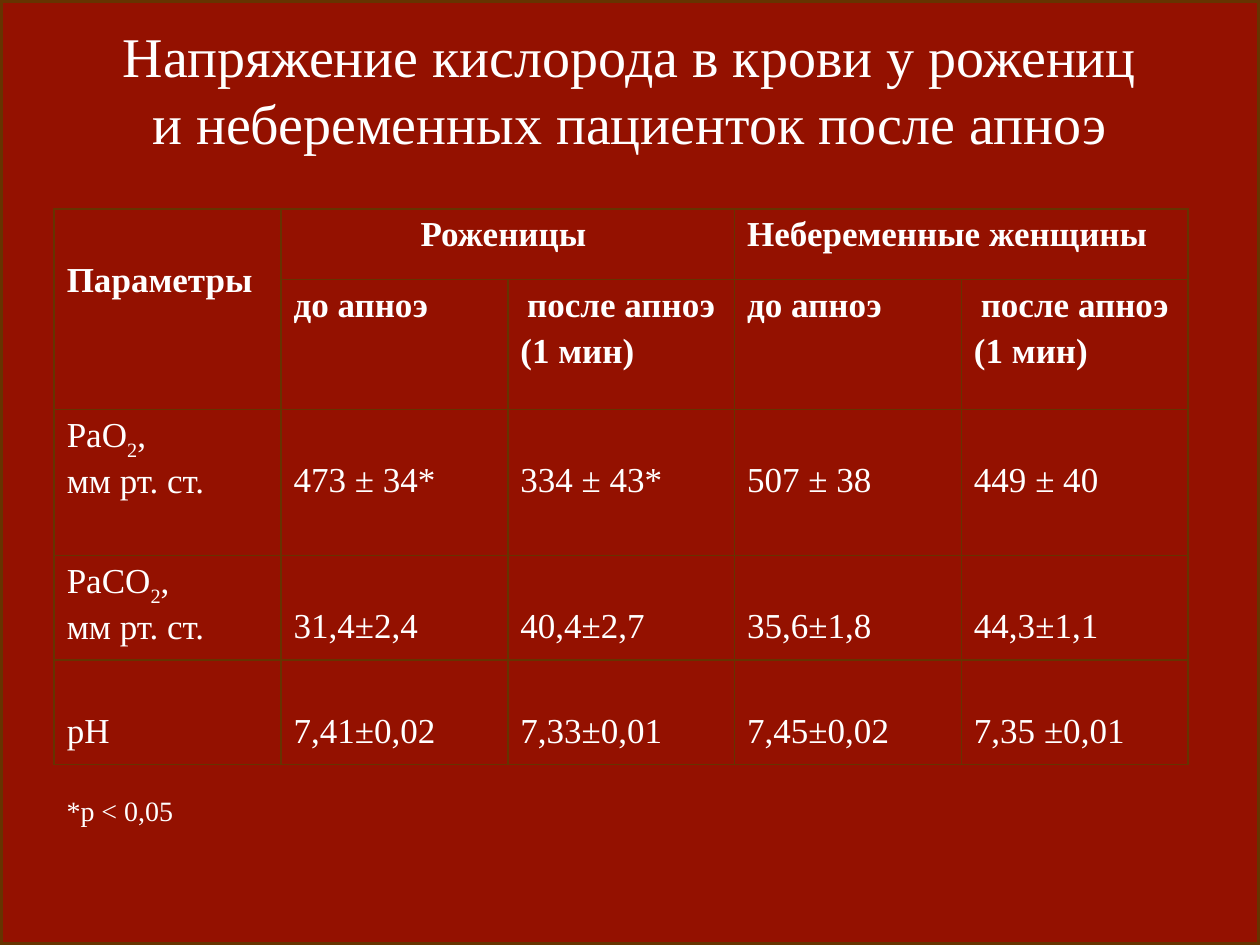
from lxml import etree
from pptx import Presentation
from pptx.dml.color import RGBColor
from pptx.enum.shapes import MSO_SHAPE
from pptx.enum.text import PP_ALIGN as Align
from pptx.oxml.ns import qn
from pptx.util import Inches, Pt

FONT = "Times New Roman"
RED, BROWN, WHITE = "941100", "663300", "FFFFFF"
COLS = [1.8] * 5
ROWS = [0.56, 1.03, 1.16, 0.83, 0.83]
LOW = 0.41  # top margin of cells whose text starts on the second line
PAIR = ["до апноэ", "после апноэ\n(1 мин)"]
DATA = [
    ["РаО|2|, \vмм рт. ст.", "473 ± 34*", "334 ± 43*", "507 ± 38", "449 ± 40"],
    ["РаСО|2|, \vмм рт. ст.", "31,4±2,4", "40,4±2,7", "35,6±1,8", "44,3±1,1"],
    ["рН", "7,41±0,02", "7,33±0,01", "7,45±0,02", "7,35 ±0,01"],
]


def paint(obj, color):
    obj.solid()
    obj.fore_color.rgb = RGBColor.from_string(color)


def style(font, size, bold=False):
    font.name, font.size, font.bold = FONT, Pt(size), bold
    paint(font.fill, WHITE)


def add_text(slide, box, text, size, align=Align.LEFT):
    frame = slide.shapes.add_textbox(*map(Inches, box)).text_frame
    frame.word_wrap = True
    par = frame.paragraphs[0]
    par.text, par.alignment = text, align
    style(par.font, size)


def add_frame(slide, size):
    rect = slide.shapes.add_shape(MSO_SHAPE.RECTANGLE, 0, 0, *size)
    rect.shadow.inherit = False
    rect.fill.background()
    paint(rect.line.fill, BROWN)
    rect.line.width = Pt(3)


def add_edges(cell):
    props = cell._tc.get_or_add_tcPr()
    for i, side in enumerate(("lnL", "lnR", "lnT", "lnB")):
        line = etree.Element(qn(f"a:{side}"), w=str(Pt(1)))
        fill = etree.SubElement(line, qn("a:solidFill"))
        etree.SubElement(fill, qn("a:srgbClr"), val=BROWN)
        props.insert(i, line)


def fill_cell(cell, text, bold=False, top=0.05, align=Align.LEFT):
    """Write text; parts at odd places between bars become subscripts."""
    cell.margin_top = Inches(top)
    frame = cell.text_frame
    for i, line in enumerate(text.split("\n")):
        par = frame.add_paragraph() if i else frame.paragraphs[0]
        if i:
            par.space_before = Pt(4)
        else:
            par.alignment = align
        for j, part in enumerate(line.split("|")):
            for k, piece in enumerate(part.split("\v")):
                if k:
                    par.add_line_break()
                run = par.add_run()
                run.text = piece
                if j % 2:
                    run.font._element.set("baseline", "-30000")
        style(par.font, 20, bold)


def add_grid(slide):
    shape = slide.shapes.add_table(
        len(ROWS), len(COLS), Inches(0.43), Inches(1.66),
        Inches(sum(COLS)), Inches(sum(ROWS)))
    table = shape.table
    for col, width in zip(table.columns, COLS):
        col.width = Inches(width)
    for row, height in zip(table.rows, ROWS):
        row.height = Inches(height)
    for cell in table.iter_cells():
        cell.fill.background()
        add_edges(cell)

    table.cell(0, 0).merge(table.cell(1, 0))
    for left in (1, 3):
        table.cell(0, left).merge(table.cell(0, left + 1))
    fill_cell(table.cell(0, 0), "Параметры", True, LOW)
    fill_cell(table.cell(0, 1), "Роженицы ", True, align=Align.CENTER)
    fill_cell(table.cell(0, 3), "Небеременные женщины", True)
    for c, text in enumerate(PAIR * 2, 1):
        align = Align.LEFT if c % 2 else Align.CENTER
        fill_cell(table.cell(1, c), text, True, align=align)
    for r, row in enumerate(DATA, 2):
        for c, text in enumerate(row):
            fill_cell(table.cell(r, c), text, top=0.05 if "|" in text else LOW)


def main():
    prs = Presentation()
    prs.slide_width, prs.slide_height = Inches(10), Inches(7.5)
    slide = prs.slides.add_slide(prs.slide_layouts[6])
    paint(slide.background.fill, RED)
    add_frame(slide, (prs.slide_width, prs.slide_height))
    add_text(
        slide, (0.25, 0.12, 9.5, 1.36),
        "Напряжение кислорода в крови у рожениц\v"
        "и небеременных пациенток после апноэ", 32, Align.CENTER)
    add_grid(slide)
    add_text(slide, (0.43, 6.25, 1.75, 0.37), "*p < 0,05", 16)
    prs.save("out.pptx")


if __name__ == "__main__":
    main()
